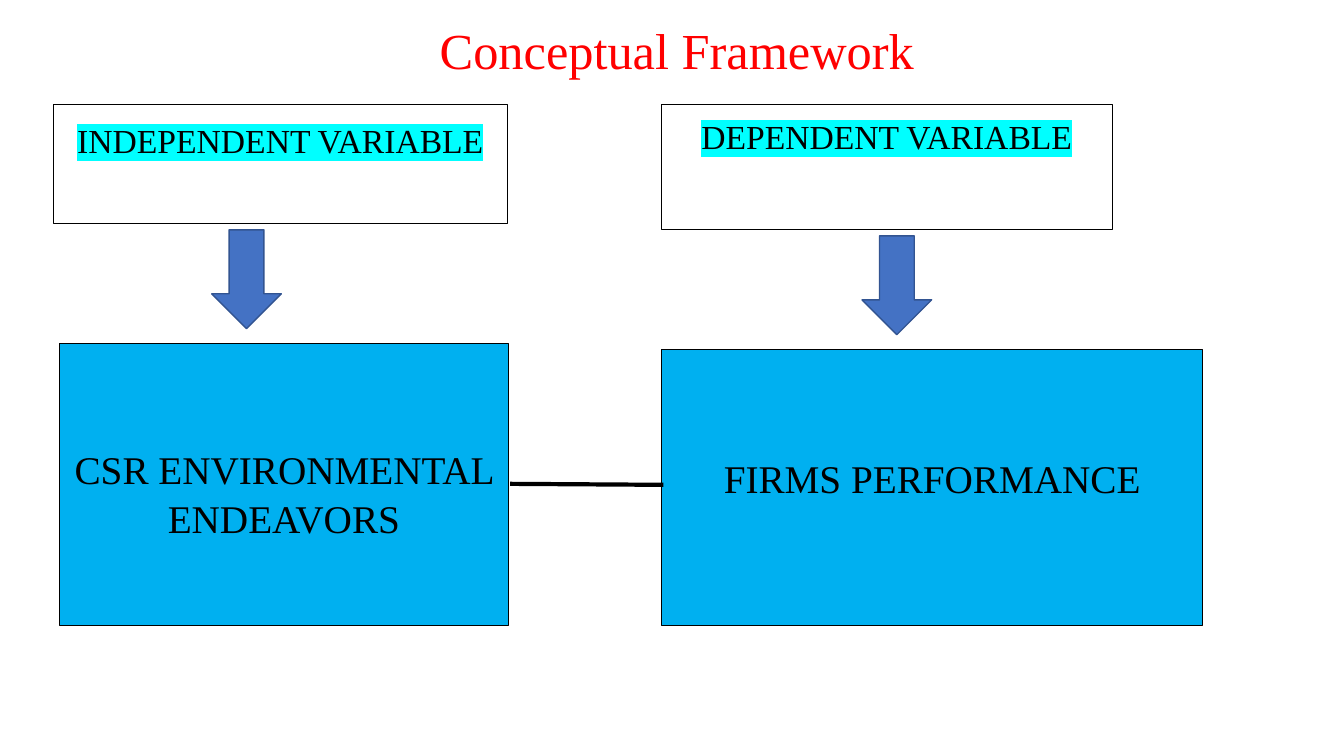
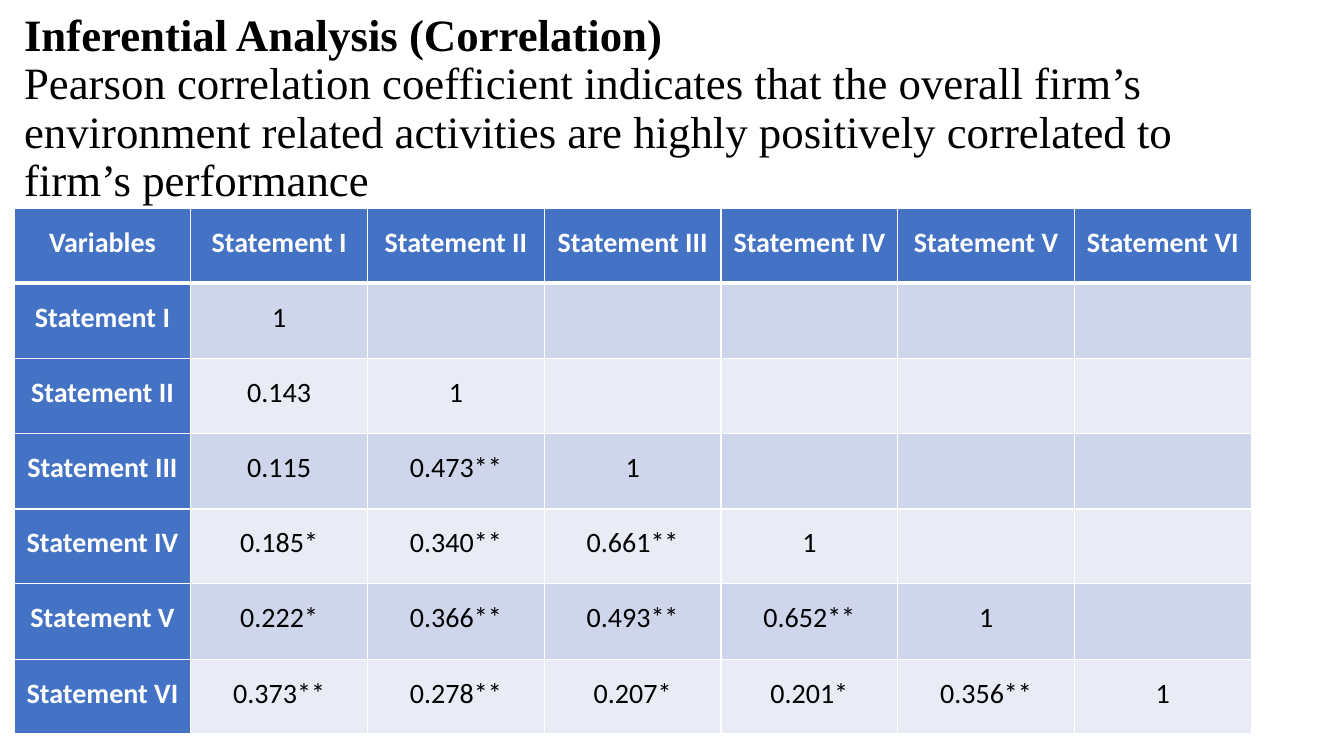
import pptx
import pptx.dml.color
import pptx.enum.shapes
import pptx.enum.text
import pptx.oxml
import pptx.oxml.ns
import pptx.util

Inches = pptx.util.Inches
Pt = pptx.util.Pt
RGBColor = pptx.dml.color.RGBColor
Shape = pptx.enum.shapes.MSO_SHAPE
Align = pptx.enum.text.PP_ALIGN
Anchor = pptx.enum.text.MSO_ANCHOR

BLACK = RGBColor(0x00, 0x00, 0x00)
WHITE = RGBColor(0xFF, 0xFF, 0xFF)
RED = RGBColor(0xFF, 0x00, 0x00)
AQUA = RGBColor(0x00, 0xFF, 0xFF)
SKY = RGBColor(0x00, 0xB0, 0xF0)
BLUE = RGBColor(0x44, 0x72, 0xC4)
DARK_BLUE = RGBColor(0x32, 0x54, 0x91)
BAND_DARK = RGBColor(0xCF, 0xD5, 0xEA)
BAND_LIGHT = RGBColor(0xE9, 0xEB, 0xF5)

STATEMENTS = [f"Statement {numeral}" for numeral in ("I", "II", "III", "IV", "V", "VI")]
CORRELATIONS = [
    [],
    ["0.143"],
    ["0.115", "0.473**"],
    ["0.185*", "0.340**", "0.661**"],
    ["0.222*", "0.366**", "0.493**", "0.652**"],
    ["0.373**", "0.278**", "0.207*", "0.201*", "0.356**"],
]


def drawing_element(xml):
    """Turn a DrawingML fragment whose root holds the mark {ns} into an element."""
    return pptx.oxml.parse_xml(xml.replace("{ns}", pptx.oxml.ns.nsdecls("a")))


class Deck:
    """Holds the shared style and the slide being filled."""

    heading_font = "Times New Roman"
    table_font = "Calibri"

    def __init__(self):
        self.presentation = pptx.Presentation()
        self.presentation.slide_width = Inches(13.33)
        self.presentation.slide_height = Inches(7.5)
        self.slide = None

    def new_slide(self):
        self.slide = self.presentation.slides.add_slide(self.presentation.slide_layouts[6])

    def set_text(self, frame, text, size, color=BLACK, font=heading_font, bold=False,
                 align=Align.CENTER, spacing=1.0):
        """Put one paragraph in a text frame and return it."""
        frame.word_wrap = True
        paragraph = frame.paragraphs[0]
        paragraph.text = text
        paragraph.alignment = align
        paragraph.line_spacing = spacing
        for run in paragraph.runs:
            run.font.size = Pt(size)
            run.font.name = font
            run.font.bold = bold
            run.font.color.rgb = color
        return paragraph

    def title(self, left, top, width, height, text, size, color=BLACK,
              align=Align.CENTER, anchor=Anchor.TOP):
        box = self.slide.shapes.add_textbox(Inches(left), Inches(top), Inches(width), Inches(height))
        box.text_frame.vertical_anchor = anchor
        return self.set_text(box.text_frame, text, size, color, align=align, spacing=0.9)

    def shape(self, kind, left, top, width, height, fill, line, line_width):
        shape = self.slide.shapes.add_shape(
            kind, Inches(left), Inches(top), Inches(width), Inches(height))
        shape.shadow.inherit = False
        shape.fill.solid()
        shape.fill.fore_color.rgb = fill
        shape.line.color.rgb = line
        shape.line.width = Pt(line_width)
        return shape

    def heading_box(self, left, top, width, height, text, spacing):
        """White box with a highlighted heading at its top."""
        box = self.shape(Shape.RECTANGLE, left, top, width, height, WHITE, BLACK, 0.5)
        frame = box.text_frame
        frame.vertical_anchor = Anchor.TOP
        frame.margin_top = Inches(0.09)
        run = self.set_text(frame, text, 24, spacing=spacing).runs[0]
        fill = run.font._element.find(pptx.oxml.ns.qn("a:solidFill"))
        fill.addnext(drawing_element(
            f'<a:highlight {{ns}}><a:srgbClr val="{AQUA}"/></a:highlight>'))

    def variable_box(self, left, top, width, height, text, margin_top, margin_bottom):
        box = self.shape(Shape.RECTANGLE, left, top, width, height, SKY, BLACK, 0.5)
        frame = box.text_frame
        frame.vertical_anchor = Anchor.MIDDLE
        frame.margin_top = Inches(margin_top)
        frame.margin_bottom = Inches(margin_bottom)
        self.set_text(frame, text, 28, spacing=1.06)

    def down_arrow(self, left, top):
        self.shape(Shape.DOWN_ARROW, left, top, 0.69, 0.98, BLUE, DARK_BLUE, 1)

    def link(self, x1, y1, x2, y2):
        line = self.slide.shapes.add_connector(
            pptx.enum.shapes.MSO_CONNECTOR.STRAIGHT,
            Inches(x1), Inches(y1), Inches(x2), Inches(y2))
        line.line.color.rgb = BLACK
        line.line.width = Pt(3)
        line._element.spPr.append(drawing_element("<a:effectLst {ns}/>"))

    def cell(self, cell, text, fill, color, bold, top_border, bottom_border):
        cell.margin_left = cell.margin_right = Inches(0.07)
        cell.margin_top = cell.margin_bottom = 0
        properties = cell._tc.get_or_add_tcPr()
        for side, width in (("L", 1), ("R", 1), ("T", top_border), ("B", bottom_border)):
            properties.append(drawing_element(
                f'<a:ln{side} {{ns}} w="{int(Pt(width))}"><a:solidFill>'
                f'<a:srgbClr val="{WHITE}"/></a:solidFill></a:ln{side}>'))
        cell.fill.solid()
        cell.fill.fore_color.rgb = fill
        if text:
            self.set_text(cell.text_frame, text, 20, color, self.table_font, bold, spacing=1.5)

    def table(self, left, top, width, row_heights, rows):
        """Table with a header row, a header column and banded rows."""
        table = self.slide.shapes.add_table(
            len(rows), len(rows[0]), Inches(left), Inches(top),
            Inches(width), Inches(sum(row_heights))).table
        table.first_row = table.horz_banding = False
        for r, texts in enumerate(rows):
            table.rows[r].height = Inches(row_heights[r])
            band = BAND_DARK if r % 2 else BAND_LIGHT
            for c, text in enumerate(texts):
                header = r == 0 or c == 0
                self.cell(table.cell(r, c), text,
                          fill=BLUE if header else band,
                          color=WHITE if header else BLACK,
                          bold=header,
                          top_border=3 if r == 1 else 1,
                          bottom_border=3 if r == 0 else 1)


def framework_slide(deck):
    deck.new_slide()
    deck.title(0.38, 0.21, 12.67, 0.8, "Conceptual Framework", 36, RED)
    deck.heading_box(0.53, 1.04, 4.5, 1.18, "INDEPENDENT VARIABLE", 1.15)
    deck.heading_box(6.56, 1.04, 4.47, 1.24, "DEPENDENT VARIABLE", 1.06)
    deck.down_arrow(2.1, 2.28)
    deck.down_arrow(8.55, 2.34)
    deck.variable_box(0.59, 3.41, 4.45, 2.79, "CSR ENVIRONMENTAL ENDEAVORS", 0.2, 0.05)
    deck.variable_box(6.56, 3.47, 5.37, 2.73, "FIRMS PERFORMANCE", 0.05, 0.27)
    deck.link(5.06, 4.8, 6.58, 4.81)


def correlation_slide(deck):
    deck.new_slide()
    finding = deck.title(
        0.14, 0.19, 12.27, 1.79,
        "Inferential Analysis (Correlation)\vPearson correlation coefficient indicates that "
        "the overall firm’s environment related activities are highly positively correlated "
        "to firm’s performance",
        32, align=Align.LEFT, anchor=Anchor.MIDDLE)
    finding.runs[0].font.bold = True

    rows = [["Variables"] + STATEMENTS]
    for statement, values in zip(STATEMENTS, CORRELATIONS):
        blanks = [""] * (len(STATEMENTS) - len(values) - 1)
        rows.append([statement] + values + ["1"] + blanks)
    row_heights = [0.75 if r % 2 else 0.74 for r in range(len(rows))]
    deck.table(0.14, 2.07, 12.27, row_heights, rows)


def main():
    deck = Deck()
    framework_slide(deck)
    correlation_slide(deck)
    deck.presentation.save("out.pptx")


if __name__ == "__main__":
    main()
